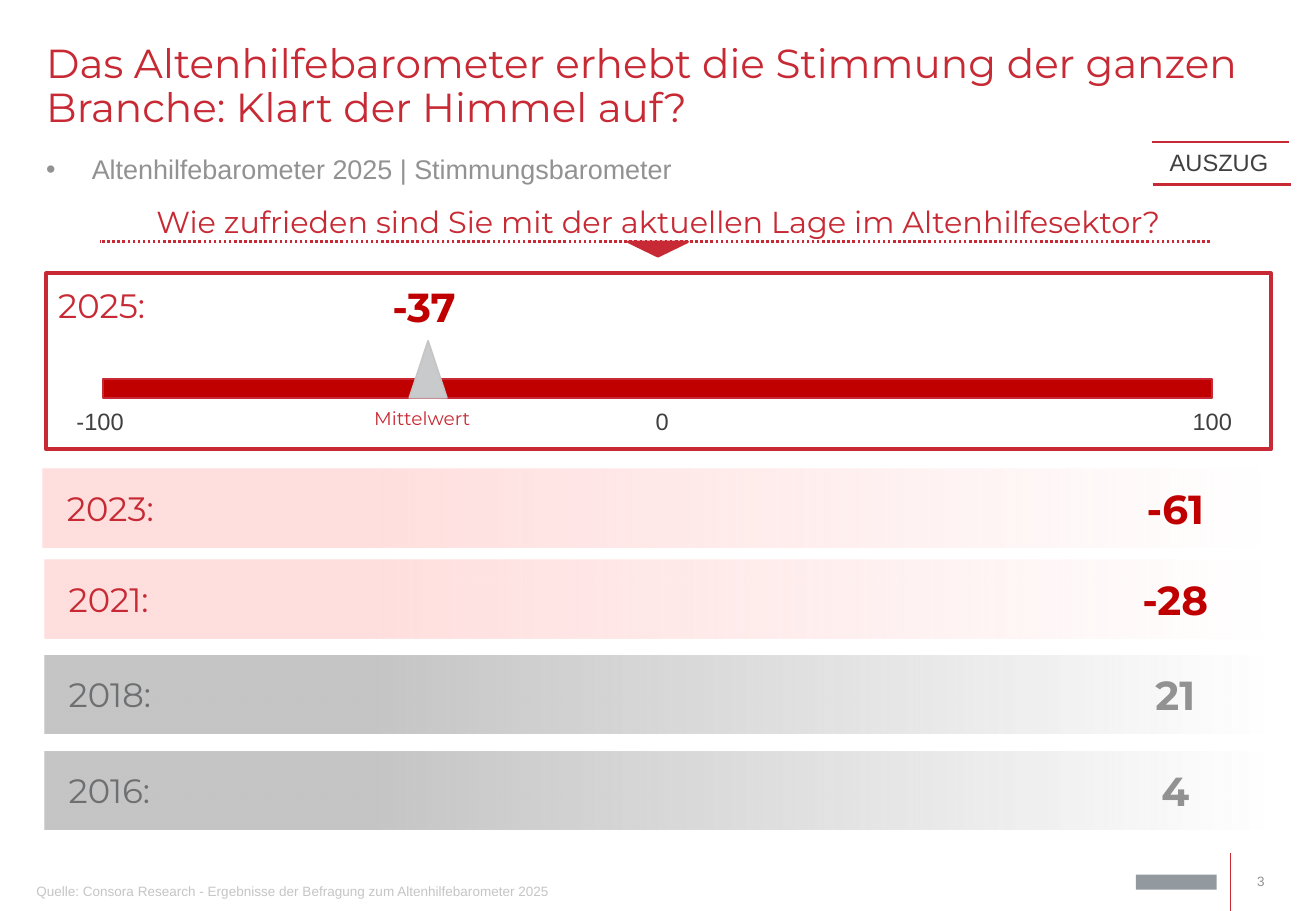
import pptx
import pptx.util
import pptx.dml.color
import pptx.enum.dml
import pptx.enum.shapes
import pptx.enum.text
import pptx.oxml
import pptx.oxml.ns
import lxml.etree

Pt = pptx.util.Pt
RGBColor = pptx.dml.color.RGBColor
Kind = pptx.enum.shapes.MSO_SHAPE
Align = pptx.enum.text.PP_ALIGN
Anchor = pptx.enum.text.MSO_ANCHOR
qn = pptx.oxml.ns.qn

# Colours and fonts
RED = RGBColor(0xC7, 0x2A, 0x34)
DEEP = RGBColor(0xC0, 0x00, 0x00)
PINK = RGBColor(0xFF, 0xDF, 0xDE)
SILVER = RGBColor(0xC5, 0xC5, 0xC5)
MARK = RGBColor(0xC9, 0xCA, 0xCC)
GREY = RGBColor(0x92, 0x92, 0x92)
SLATE = RGBColor(0x6D, 0x6F, 0x71)
DARK = RGBColor(0x40, 0x40, 0x40)
LOGO = RGBColor(0x92, 0x9A, 0x9F)
HEAD, BODY = "Montserrat", "Arial"

# Content
TITLE = "Das Altenhilfebarometer erhebt die Stimmung der ganzen Branche: Klart der Himmel auf?"
SUB = "Altenhilfebarometer 2025 | Stimmungsbarometer"
ASK = "Wie zufrieden sind Sie mit der aktuellen Lage im Altenhilfesektor?"
SOURCE = "Quelle: Consora Research - Ergebnisse der Befragung zum Altenhilfebarometer 2025"
# Year, value, left, top, band colour, year colour, value colour
YEARS = [
    ("2023:", "-61", 25.4, 278, PINK, RED, DEEP),
    ("2021:", "-28", 26.4, 332, PINK, RED, DEEP),
    ("2018:", "21", 26.4, 388.4, SILVER, SLATE, GREY),
    ("2016:", "4", 26.4, 445.2, SILVER, SLATE, GREY),
]
# Text, left, width, side padding, alignment
SCALE = [
    ("-100", 38.2, 51, 7.2, Align.LEFT),
    ("0", 384.5, 16, 0, Align.CENTER),
    ("100", 699.8, 51, 7.2, Align.LEFT),
]
# Start x, end x, y, dash
RULES = [
    (717.1, 59, 143.3, pptx.enum.dml.MSO_LINE.ROUND_DOT),
    (682.6, 763.9, 84.2, None),
    (683.3, 765.4, 109.4, None),
]
EDGE, WIDE = 27.4, 725.8
BAND_W, BAND_H, VALUE_X = 723.6, 46.4, 696.6

deck = pptx.Presentation()
deck.slide_width, deck.slide_height = Pt(780), Pt(540)
slide = deck.slides.add_slide(deck.slide_layouts[1])
shapes = slide.shapes


def style(shape, text, size, color, font=BODY, align=Align.LEFT, bold=False,
          pad=(7.2, 3.6, 7.2, 3.6), anchor=Anchor.TOP, lead=None):
    frame = shape.text_frame
    frame.text = text
    frame.word_wrap = True
    frame.auto_size = pptx.enum.text.MSO_AUTO_SIZE.NONE
    frame.vertical_anchor = anchor
    (frame.margin_left, frame.margin_top,
     frame.margin_right, frame.margin_bottom) = map(Pt, pad)
    para = frame.paragraphs[0]
    para.alignment = align
    para.space_before = Pt(0)
    if lead:
        para.line_spacing = lead
    face = para.runs[0].font
    face.size, face.name, face.bold = Pt(size), font, bold
    face.color.rgb = color


def write(box, *args, **rest):
    style(shapes.add_textbox(*map(Pt, box)), *args, **rest)


def year(text, left, top, color):
    write((left, top, 215, 31.7), text, 20, color, HEAD,
          pad=(7.2, 3.6, 3.6, 3.6), anchor=Anchor.MIDDLE)


def draw(kind, box, fill=None, line=None, weight=1):
    shape = shapes.add_shape(kind, *map(Pt, box))
    shape.shadow.inherit = False
    if fill is None:
        shape.fill.background()
    else:
        shape.fill.solid()
        shape.fill.fore_color.rgb = fill
    if line is None:
        shape.line.fill.background()
    else:
        shape.line.color.rgb = line
        shape.line.width = Pt(weight)
    return shape


def rule(x1, y1, x2, y2, weight=1.5, dash=None):
    line = shapes.add_connector(pptx.enum.shapes.MSO_CONNECTOR.STRAIGHT,
                                Pt(x1), Pt(y1), Pt(x2), Pt(y2))
    line.line.color.rgb = RED
    line.line.width = Pt(weight)
    if dash:
        line.line.dash_style = dash
    lxml.etree.SubElement(line.element.spPr, qn("a:effectLst"))


def fade(shape, color):
    """Solid on the left, clear at the right edge."""
    shape.fill.gradient()
    shape.fill.gradient_angle = 180
    for stop, place in zip(shape.fill.gradient_stops, (0, 0.74)):
        stop.position = place
        stop.color.rgb = color
    clear = shape.element.spPr.findall(".//" + qn("a:srgbClr"))[0]
    lxml.etree.SubElement(clear, qn("a:alpha")).set("val", "0")


def place(shape, box):
    shape.left, shape.top, shape.width, shape.height = map(Pt, box)


# Title and subtitle
title, sub = shapes.title, slide.placeholders[1]
place(title, (EDGE, 25.9, WIDE, 55.4))
style(title, TITLE, 24, RED, HEAD, pad=(0, 0, 0, 0), lead=0.9)
place(sub, (EDGE, 88.6, WIDE, 22.3))
sub.text_frame.text = SUB
props = sub.text_frame.paragraphs[0]._p.get_or_add_pPr()
props.set("marL", "0")
props.set("indent", "0")
lxml.etree.SubElement(props, qn("a:buNone"))
style(sub, SUB, 16, GREY, pad=(0, 0, 0, 0), lead=1.1)

# Question and excerpt tag
write((EDGE, 116.6, WIDE, 29), ASK, 18, RED, HEAD, Align.CENTER)
write((681.1, 84.2, 82.8, 24.5), "AUSZUG", 14, DARK, align=Align.CENTER)
for x1, x2, y, dash in RULES:
    rule(x1, y, x2, y, dash=dash)
draw(Kind.ISOSCELES_TRIANGLE, (372.3, 143.3, 35.3, 8.6), RED, RED, 1.5).rotation = 180

# Scale for 2025
draw(Kind.RECTANGLE, (EDGE, 162, WIDE, 104.4), line=RED, weight=2.25)
draw(Kind.RECTANGLE, (61.2, 224.6, 657.4, 11.5), DEEP, RED)
draw(Kind.ISOSCELES_TRIANGLE, (242.6, 202, 22.3, 33.8), MARK, SILVER)
year("2025:", EDGE, 164.9, RED)
write((225.4, 163.4, 57, 36), "-37", 24, DEEP, HEAD, bold=True)
write((214.6, 237.6, 85, 21), "Mittelwert", 11, RED, HEAD)
for text, left, width, side, align in SCALE:
    write((left, 237.6, width, 24.5), text, 14, DARK, align=align,
          pad=(side, 3.6, side, 3.6))

# Earlier years
for name, value, left, top, band, ink, tone in YEARS:
    fade(draw(Kind.RECTANGLE, (left, top, BAND_W, BAND_H), band), band)
    year(name, left + 7.2, top + 7.2, ink)
    write((VALUE_X - 36, top + 5.2, 72, 36), value, 24, tone, HEAD, Align.CENTER, True)

# Footer
write((14.4, 519.8, 375.8, 20), SOURCE, 8, SILVER)
draw(Kind.RECTANGLE, (673.2, 518.4, 48, 9), LOGO)
rule(729.4, 505.4, 729.4, 540, 1)
write((733, 515.5, 16.6, 13.7), "3", 8, GREY, align=Align.RIGHT,
      pad=(0, 0, 0, 0), anchor=Anchor.MIDDLE)

deck.save("out.pptx")
